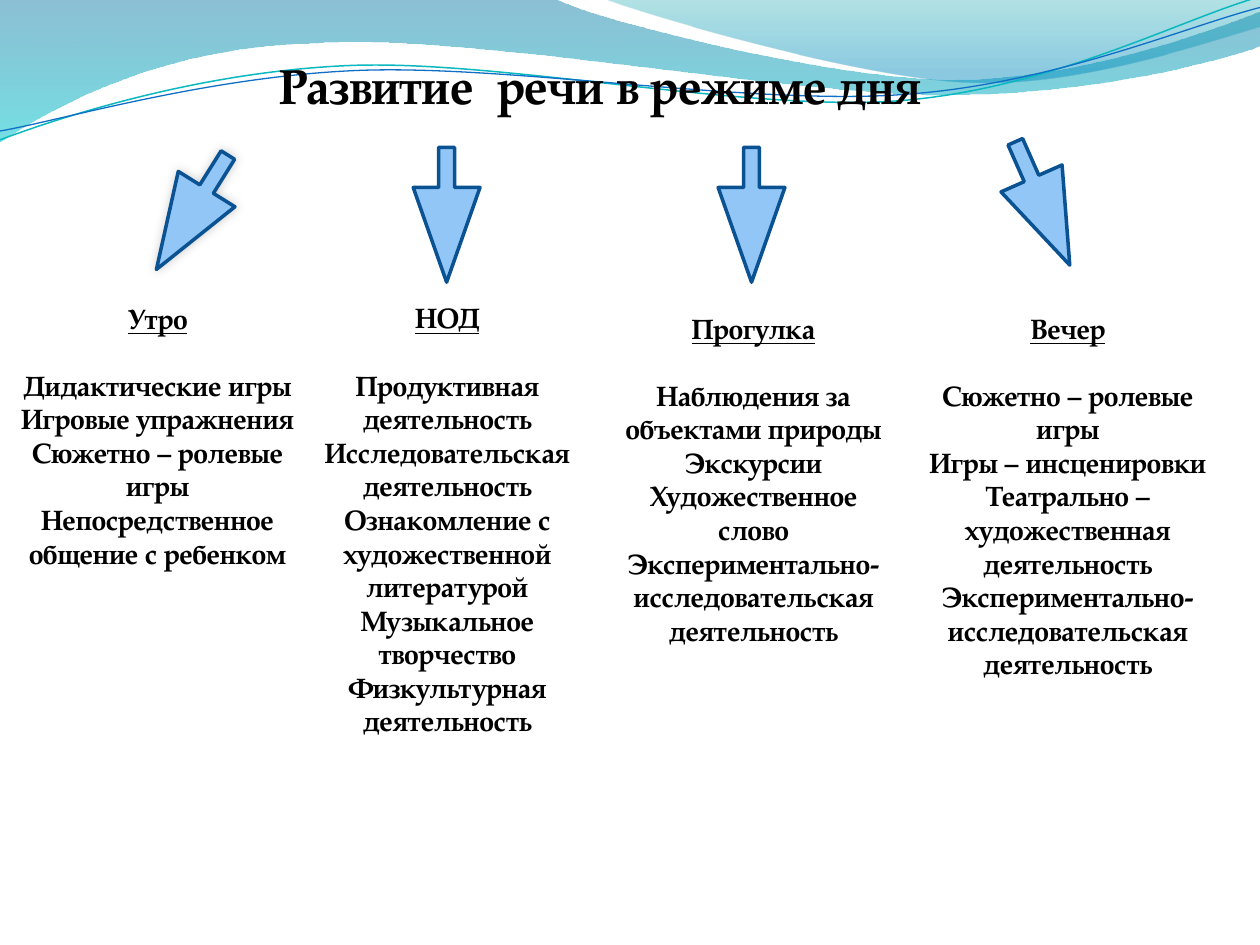
from math import cos, radians, sin

from lxml import etree
from pptx import Presentation
from pptx.dml.color import RGBColor
from pptx.enum.shapes import MSO_SHAPE
from pptx.enum.text import MSO_AUTO_SIZE, PP_ALIGN
from pptx.oxml.ns import qn
from pptx.util import Inches, Pt

DOWN_ARROW = MSO_SHAPE.DOWN_ARROW
CENTER = PP_ALIGN.CENTER
GROW = MSO_AUTO_SIZE.SHAPE_TO_FIT_TEXT

FONT = "TeX Gyre Pagella"
BLACK = RGBColor(0x00, 0x00, 0x00)
ARROW_FILL = RGBColor(0x91, 0xC6, 0xF7)
ARROW_LINE = RGBColor(0x0B, 0x52, 0x92)
DEEP_BLUE = RGBColor(0x00, 0x74, 0xA1)
CYAN = RGBColor(0x00, 0xC6, 0xCF)
TEAL = RGBColor(0x00, 0xA1, 0xA9)
BLUE = RGBColor(0x00, 0x8B, 0xBF)
TEAL_LINE = RGBColor(0x0A, 0xB8, 0xBF)
BLUE_LINE = RGBColor(0x0F, 0x6F, 0xC6)

TITLE = "Развитие  речи в режиме дня"

# Heading, box (left, top, width, height), activities
COLUMNS = [
    ("Утро", (0, 2.34, 2.5, 2.79), [
        "Дидактические игры", "Игровые упражнения", "Сюжетно – ролевые игры",
        "Непосредственное общение с ребенком"]),
    ("НОД", (2.34, 2.34, 2.42, 3.6), [
        "Продуктивная деятельность", "Исследовательская деятельность",
        "Ознакомление с художественной литературой",
        "Музыкальное творчество", "Физкультурная деятельность"]),
    ("Прогулка", (4.77, 2.42, 2.42, 3.06), [
        "Наблюдения за объектами природы", "Экскурсии",
        "Художественное слово",
        "Экспериментально-исследовательская деятельность"]),
    ("Вечер", (7.11, 2.42, 2.73, 3.06), [
        "Сюжетно – ролевые игры", "Игры – инсценировки",
        "Театрально – художественная деятельность",
        "Экспериментально-исследовательская деятельность"]),
]

# Left, top, rotation, has a shadow
ARROWS = [(1.26, 1.15, 32, True), (3.28, 1.17, 0, False),
          (5.7, 1.17, 0, False), (8.01, 1.08, 336.2, False)]

# Outlines: a pair is a straight step, six numbers are a Bezier curve.
# Gradient stops: position, colour, opacity in percent
WAVES = [
    ([(0, 0), (4.4, -0.01), (4.76, 0.17, 6.64, 0.63, 7.58, 0.63),
      (8.53, 0.63, 9.58, 0.26, 10, 0.09), (10.01, 0.36),
      (9.83, 0.44, 8.7, 0.76, 7.46, 0.75),
      (6.22, 0.75, 3.82, 0.28, 2.57, 0.34),
      (1.29, 0.36, 0.46, 0.83, -0.01, 1.13)],
     [(0, DEEP_BLUE, 45), (1, CYAN, 55)]),
    ([(4.79, -0.01), (5.09, 0.11, 6.82, 0.62, 7.69, 0.65),
      (8.56, 0.69, 9.61, 0.32, 10, 0.21), (10, 0)],
     [(0, TEAL, 30), (0.8, BLUE, 45)]),
]
# Outline as it lies on the page, centre of rotation, colour, width
LINES = [
    ([(0, 1.11), (0.48, 0.93, 1.58, 0.57, 2.77, 0.52),
      (3.95, 0.47, 5.93, 0.89, 7.13, 0.8),
      (8.33, 0.71, 9.38, 0.15, 9.98, -0.02)], (4.99, 0.57), TEAL_LINE, 0.85),
    ([(0, 1.04), (0.47, 0.96, 1.64, 0.61, 2.83, 0.56),
      (4.03, 0.51, 5.97, 0.84, 7.17, 0.75),
      (8.36, 0.67, 9.41, 0.21, 10, 0.06)], (5, 0.59), BLUE_LINE, 0.75),
]
LINE_TILT = 2.7


def pairs(step):
    return list(zip(step[::2], step[1::2]))


def turn(step, center, degrees):
    """Rotate every point of a step clockwise about a centre."""
    c, s = cos(radians(degrees)), sin(radians(degrees))
    turned = []
    for x, y in pairs(step):
        dx, dy = x - center[0], y - center[1]
        turned += [center[0] + dx * c - dy * s, center[1] + dx * s + dy * c]
    return tuple(turned)


def add_outline(page, steps, close):
    points = [(Inches(x), Inches(y)) for step in steps for x, y in pairs(step)]
    builder = page.shapes.build_freeform(*points[0])
    builder.add_line_segments(points[1:], close=close)
    shape = builder.convert_to_shape()
    shape.shadow.inherit = False
    # Join the three segments of each curved step into one Bezier curve
    segments = iter(list(shape.element.iter(qn("a:lnTo"))))
    for step in steps[1:]:
        first = next(segments)
        if len(step) == 6:
            first.tag = qn("a:cubicBezTo")
            for _ in range(2):
                extra = next(segments)
                first.append(extra[0])
                extra.getparent().remove(extra)
    return shape


def add_wave(page, steps, stops):
    wave = add_outline(page, steps, True)
    wave.line.fill.background()
    wave.fill.gradient()
    wave.fill.gradient_angle = 270
    for stop, (position, color, opacity) in zip(wave.fill.gradient_stops, stops):
        stop.position = position
        stop.color.rgb = color
    colors = wave.element.spPr.find(qn("a:gradFill")).iter(qn("a:srgbClr"))
    for node, (position, color, opacity) in zip(colors, stops):
        etree.SubElement(node, qn("a:alpha"), val=str(opacity * 1000))


def add_line(page, steps, center, color, width):
    level = [turn(step, center, LINE_TILT) for step in steps]
    line = add_outline(page, level, False)
    line.rotation = 360 - LINE_TILT
    line.fill.background()
    line.line.color.rgb = color
    line.line.width = Pt(width)


def add_text(page, place, texts, size):
    box = page.shapes.add_textbox(*map(Inches, place))
    frame = box.text_frame
    frame.word_wrap = True
    frame.auto_size = GROW
    frame.text = "\n".join(texts)
    for para in frame.paragraphs:
        para.alignment = CENTER
        para.font.name = FONT
        para.font.size = Pt(size)
        para.font.bold = True
        para.font.color.rgb = BLACK
    return frame.paragraphs


def add_arrow(page, left, top, rotation, shadowed):
    arrow = page.shapes.add_shape(
        DOWN_ARROW, *map(Inches, (left, top, 0.53, 1.07)))
    arrow.rotation = rotation
    arrow.adjustments[0] = 0.238
    arrow.adjustments[1] = 1.419
    arrow.fill.solid()
    arrow.fill.fore_color.rgb = ARROW_FILL
    arrow.line.color.rgb = ARROW_LINE
    arrow.line.width = Pt(2)
    outline = arrow.element.spPr.find(qn("a:ln"))
    etree.SubElement(outline, qn("a:round"))
    arrow.shadow.inherit = False
    if shadowed:
        effects = arrow.element.spPr.find(qn("a:effectLst"))
        shadow = etree.SubElement(effects, qn("a:outerShdw"),
                                  blurRad=str(Pt(6)), dist="0", dir="18900000")
        color = etree.SubElement(shadow, qn("a:srgbClr"), val=str(BLACK))
        etree.SubElement(color, qn("a:alpha"), val="20000")


def main():
    deck = Presentation()
    deck.slide_width, deck.slide_height = Inches(10), Inches(7.5)
    page = deck.slides.add_slide(deck.slide_layouts[6])

    # Decorative header
    for wave in WAVES:
        add_wave(page, *wave)
    for line in LINES:
        add_line(page, *line)

    # Title and the four parts of the day
    add_text(page, (1.25, 0.39, 7.03, 0.57), [TITLE], 28)
    for heading, place, activities in COLUMNS:
        paras = add_text(page, place, [heading] + activities, 16)
        paras[0].font.underline = True
        paras[1].space_before = Pt(19.2)

    # Arrows from the title to each part
    for arrow in ARROWS:
        add_arrow(page, *arrow)

    deck.save("out.pptx")


if __name__ == "__main__":
    main()
